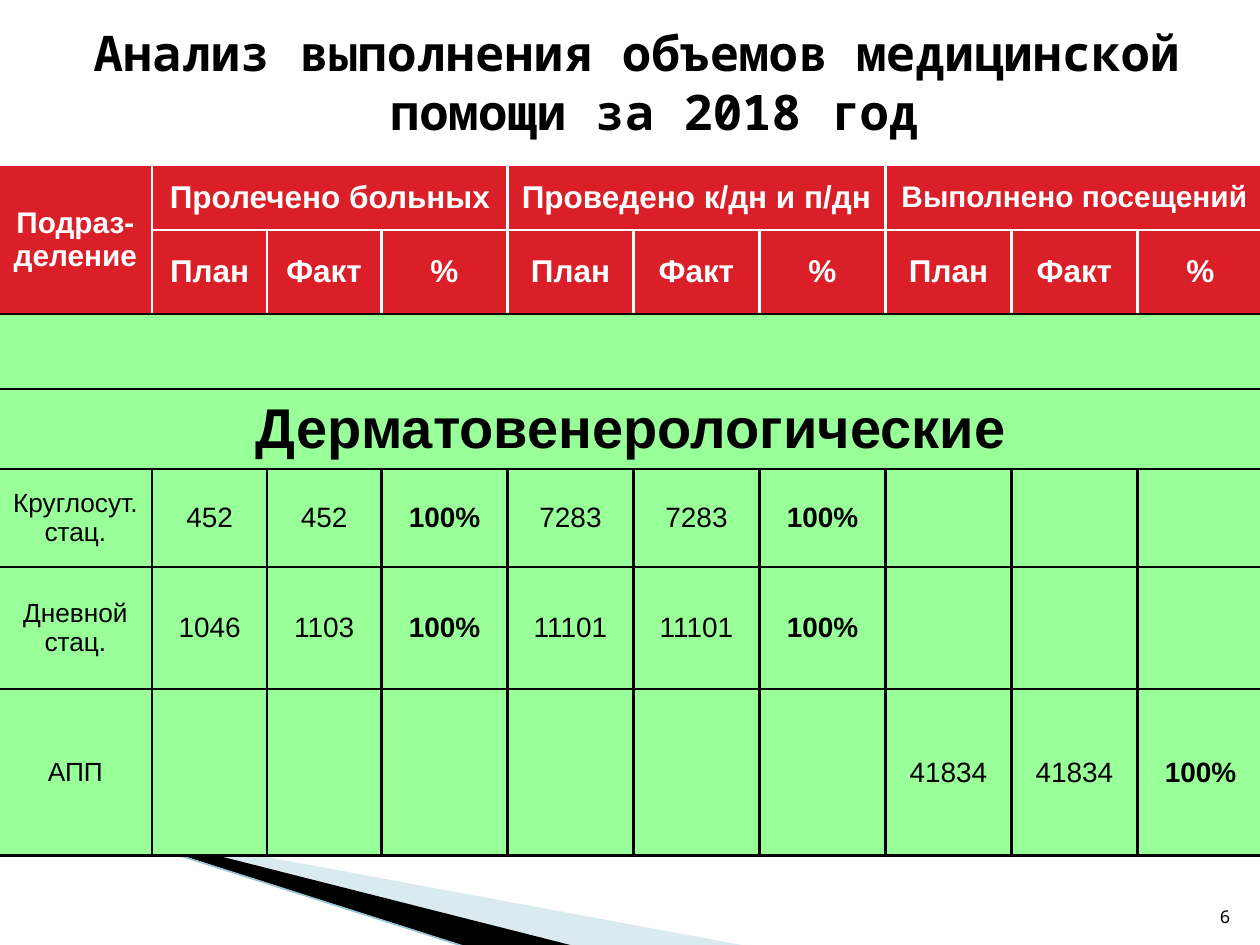
from dataclasses import dataclass
from lxml.etree import SubElement
from pptx import Presentation
from pptx.dml.color import RGBColor
from pptx.enum.shapes import MSO_CONNECTOR
from pptx.enum.text import MSO_ANCHOR, MSO_AUTO_SIZE, PP_ALIGN
from pptx.oxml import parse_xml
from pptx.oxml.ns import nsdecls, qn
from pptx.util import Cm, Pt


@dataclass(frozen=True)
class Theme:
    black: str = "000000"
    white: str = "FFFFFF"
    red: str = "DA1F28"
    green: str = "99FF99"
    pale: str = "A0CBDC"
    edge: str = "97C5D8"
    mono: str = "Noto Sans Mono"
    sans: str = "Arial"
    title: int = 28
    band: int = 32
    head: int = 18
    tight: int = 17
    value: int = 16
    label: int = 15
    page: int = 10


def put(frame, text, font, size, color, bold=False, align=PP_ALIGN.CENTER):
    """Write one formatted paragraph and return it."""
    para = frame.paragraphs[0]
    para.alignment = align
    para.space_before = Pt(0)
    run = para.add_run()
    run.text = text
    run.font.name, run.font.size, run.font.bold = font, Pt(size), bold
    run.font.color.rgb = RGBColor.from_string(color)
    return para


class Deck:
    def __init__(self, look):
        self.look = look
        self.prs = Presentation()
        self.prs.slide_width, self.prs.slide_height = Cm(25.4), Cm(19.05)
        self.slide = self.prs.slides.add_slide(self.prs.slide_layouts[2])
        self.shapes = self.slide.shapes

    def wedge(self, points, color, alpha=None):
        start, *rest = [(Cm(x), Cm(y)) for x, y in points]
        draft = self.shapes.build_freeform(*start)
        draft.add_line_segments(rest, close=True)
        shape = draft.convert_to_shape()
        shape.shadow.inherit = False
        shape.line.fill.background()
        shape.fill.solid()
        shape.fill.fore_color.rgb = RGBColor.from_string(color)
        if alpha:
            tint = shape.fill._xPr.find(".//" + qn("a:srgbClr"))
            SubElement(tint, qn("a:alpha"), val=str(alpha * 1000))

    def line(self, x1, y1, x2, y2, color, width):
        line = self.shapes.add_connector(
            MSO_CONNECTOR.STRAIGHT, Cm(x1), Cm(y1), Cm(x2), Cm(y2))
        line.line.color.rgb = RGBColor.from_string(color)
        line.line.width = Pt(width)
        SubElement(line._element.spPr, qn("a:effectLst"))

    def title(self, text, left, top, width, height):
        # The heading sits in the body placeholder; the title one is not needed
        unused = self.shapes.title._element
        unused.getparent().remove(unused)
        body = self.slide.placeholders[1]
        body.left, body.top = Cm(left), Cm(top)
        body.width, body.height = Cm(width), Cm(height)
        frame = body.text_frame
        frame.auto_size = MSO_AUTO_SIZE.NONE
        frame.vertical_anchor = MSO_ANCHOR.TOP
        para = put(frame, text, self.look.mono, self.look.title,
                   self.look.black, bold=True)
        props = para._p.get_or_add_pPr()
        props.set("marL", str(Cm(1.02)))
        props.set("indent", str(Cm(-0.71)))

    def number(self, text, left, top, side):
        box = self.shapes.add_textbox(Cm(left), Cm(top), Cm(side), Cm(side))
        frame = box.text_frame
        frame.word_wrap = True
        frame.vertical_anchor = MSO_ANCHOR.BOTTOM
        put(frame, text, self.look.mono, self.look.page, self.look.black,
            align=PP_ALIGN.RIGHT)

    def grid(self, left, top, cols, rows):
        table = self.shapes.add_table(
            len(rows), len(cols), Cm(left), Cm(top),
            Cm(sum(cols)), Cm(sum(rows))).table
        table.first_row = table.horz_banding = False
        for col, width in zip(table.columns, cols):
            col.width = Cm(width)
        for row, height in zip(table.rows, rows):
            row.height = Cm(height)
        return table

    def cell(self, cell, fill, edge, base):
        cell.fill.solid()
        cell.fill.fore_color.rgb = RGBColor.from_string(fill)
        cell.vertical_anchor = MSO_ANCHOR.MIDDLE
        cell.margin_left = cell.margin_right = Cm(0.15)
        props = cell._tc.get_or_add_tcPr()
        for spot, side in enumerate("LRTB"):
            color = base if side == "B" else edge
            props.insert(spot, parse_xml(
                f'<a:ln{side} {nsdecls("a")} w="{Pt(1.5)}"><a:solidFill>'
                f'<a:srgbClr val="{color}"/></a:solidFill></a:ln{side}>'))


def main():
    look = Theme()
    deck = Deck(look)

    # Corner ornament
    deck.wedge([(1.4, 16.54), (15.11, 19.08), (11.58, 19.08), (1.4, 16.51)],
               look.pale, alpha=40)
    deck.wedge([(1.35, 16.48), (11.61, 19.08), (9.45, 19.1), (1.37, 16.51)],
               look.black)
    deck.line(-0.03, 16.08, 9.42, 19.1, look.edge, 0.95)

    # Heading and page number
    deck.title("Анализ выполнения объемов медицинской помощи за 2018 год",
               0.58, 0.33, 24.2, 18.42)
    deck.number("6", 24.03, 17.8, 1.02)

    # Table frame: two header rows in red, the rest in green
    cols = [3.1] + [2.31] * 2 + [2.54] * 7
    rows = [1.3, 1.6, 1.52, 1.52, 1.98, 2.46, 3.35]
    table = deck.grid(-0.03, 3.33, cols, rows)
    for r in range(len(rows)):
        for c in range(len(cols)):
            head = r < 2
            edge = look.white if head else look.black
            base = look.white if r == 0 and c > 0 else look.black
            deck.cell(table.cell(r, c), look.red if head else look.green,
                      edge, base)

    # Merged cells
    table.cell(0, 0).merge(table.cell(1, 0))
    for c in (1, 4, 7):
        table.cell(0, c).merge(table.cell(0, c + 2))
    for r in (2, 3):
        table.cell(r, 0).merge(table.cell(r, 9))

    def fill(r, c, text, size, color=look.black, bold=False):
        put(table.cell(r, c).text_frame, text, look.sans, size, color, bold)

    # Header wording
    heads = [(0, "Подраз-деление", look.tight),
             (1, "Пролечено больных", look.head),
             (4, "Проведено к/дн и п/дн", look.head),
             (7, "Выполнено посещений", look.tight)]
    for c, text, size in heads:
        fill(0, c, text, size, look.white, True)
    for c, text in enumerate(["План", "Факт", "%"] * 3, 1):
        fill(1, c, text, look.head, look.white, True)
    fill(3, 0, "Дерматовенерологические", look.band, bold=True)

    # Values: label, first column used, figures
    data = [
        ("Круглосут. стац.", 1, ["452", "452", "100%", "7283", "7283", "100%"]),
        ("Дневной стац.", 1,
         ["1046", "1103", "100%", "11101", "11101", "100%"]),
        ("АПП", 7, ["41834", "41834", "100%"]),
    ]
    for r, (label, first, values) in enumerate(data, 4):
        fill(r, 0, label, look.label)
        for c, text in enumerate(values, first):
            fill(r, c, text, look.value, bold=text.endswith("%"))

    deck.prs.save("out.pptx")


if __name__ == "__main__":
    main()
